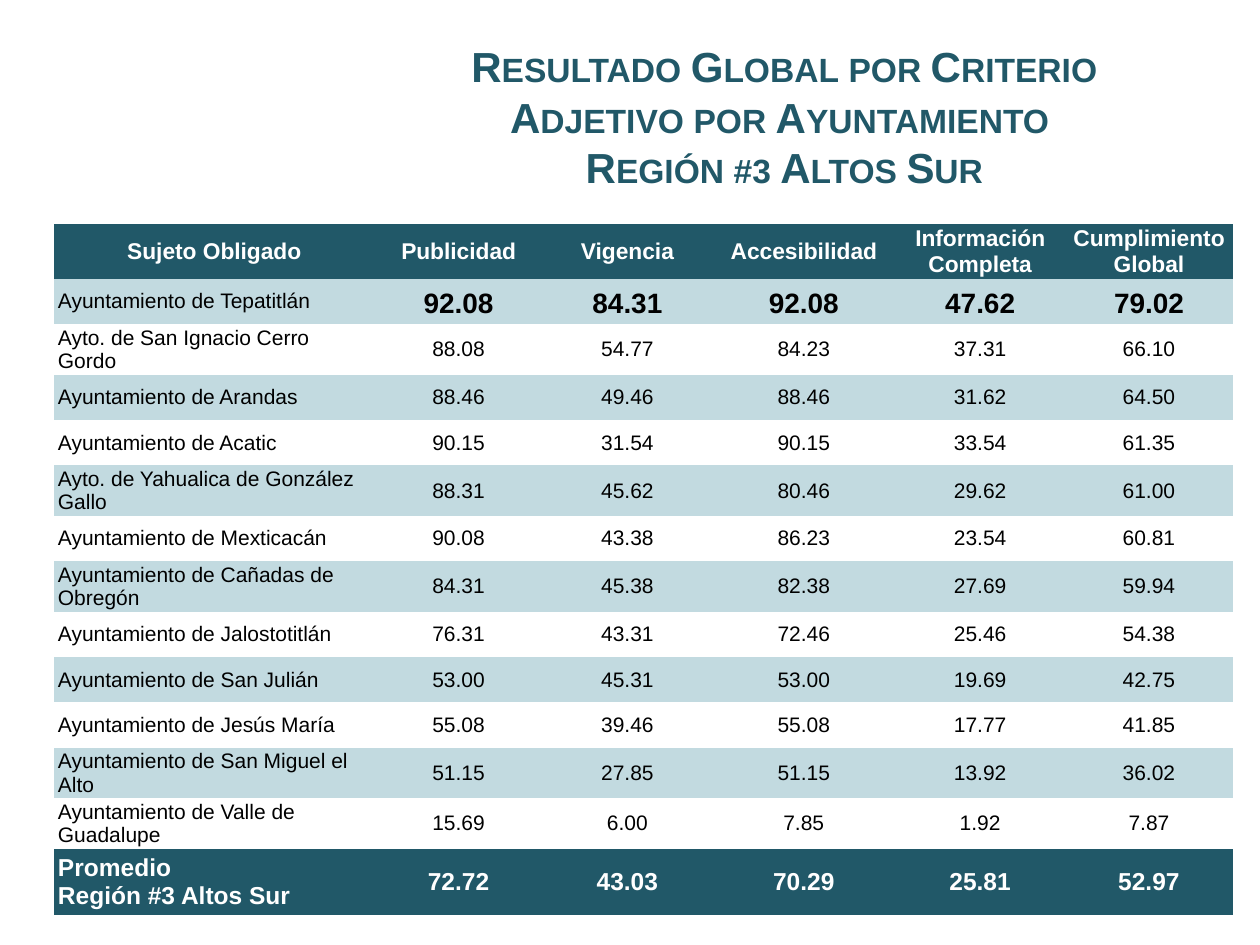
from pptx import Presentation
from pptx.dml.color import RGBColor
from pptx.enum.text import MSO_ANCHOR as Anchor, PP_ALIGN as Align
from pptx.util import Inches, Pt

TEAL = RGBColor(0x21, 0x58, 0x68)
PALE = RGBColor(0xC2, 0xDA, 0xE0)
WHITE = RGBColor(0xFF, 0xFF, 0xFF)
BLACK = RGBColor(0, 0, 0)

ROWS = [
    ("Sujeto Obligado", "Publicidad", "Vigencia", "Accesibilidad",
     "Información\vCompleta", "Cumplimiento Global"),
    ("Ayuntamiento de Tepatitlán", "92.08", "84.31", "92.08", "47.62", "79.02"),
    ("Ayto. de San Ignacio Cerro Gordo", "88.08", "54.77", "84.23", "37.31", "66.10"),
    ("Ayuntamiento de Arandas", "88.46", "49.46", "88.46", "31.62", "64.50"),
    ("Ayuntamiento de Acatic", "90.15", "31.54", "90.15", "33.54", "61.35"),
    ("Ayto. de Yahualica de González Gallo", "88.31", "45.62", "80.46", "29.62", "61.00"),
    ("Ayuntamiento de Mexticacán", "90.08", "43.38", "86.23", "23.54", "60.81"),
    ("Ayuntamiento de Cañadas de Obregón", "84.31", "45.38", "82.38", "27.69", "59.94"),
    ("Ayuntamiento de Jalostotitlán", "76.31", "43.31", "72.46", "25.46", "54.38"),
    ("Ayuntamiento de San Julián", "53.00", "45.31", "53.00", "19.69", "42.75"),
    ("Ayuntamiento de Jesús María", "55.08", "39.46", "55.08", "17.77", "41.85"),
    ("Ayuntamiento de San Miguel el Alto", "51.15", "27.85", "51.15", "13.92", "36.02"),
    ("Ayuntamiento de Valle de Guadalupe", "15.69", "6.00", "7.85", "1.92", "7.87"),
    ("Promedio\nRegión #3 Altos Sur", "72.72", "43.03", "70.29", "25.81", "52.97"),
]
WIDTHS = [2.54, 1.34, 1.34, 1.46, 1.34, 1.34]
LAST = len(ROWS) - 1
TALL = 30  # names longer than this take two lines


def style(par, size, color, bold, align):
    par.alignment = align
    font = par.font
    font.name, font.size, font.bold = "Arial", Pt(size), bold
    font.color.rgb = color


prs = Presentation()
prs.slide_width, prs.slide_height = Inches(10), Inches(7.5)
slide = prs.slides.add_slide(prs.slide_layouts[6])

# Title in small capitals
box = slide.shapes.add_textbox(Inches(2.95), Inches(0.3), Inches(6.55), Inches(1.25))
frame = box.text_frame
frame.word_wrap = True
frame.vertical_anchor = Anchor.MIDDLE
par = frame.paragraphs[0]
par.text = ("Resultado Global por Criterio Adjetivo por Ayuntamiento \v"
            "Región #3 Altos Sur")
style(par, 24, TEAL, True, Align.CENTER)
for props in par._p.xpath(".//a:defRPr | .//a:rPr"):
    props.set("cap", "small")

# Table without style or grid
table = slide.shapes.add_table(len(ROWS), len(WIDTHS), Inches(0.43), Inches(1.78),
                               Inches(sum(WIDTHS)), Inches(5.52)).table
table.horz_banding = False
table._tbl.tblPr.xpath("a:tableStyleId")[0].text = "{2D5ABB26-0587-4C30-8999-92F81FD0307C}"
for col, width in zip(table.columns, WIDTHS):
    col.width = Inches(width)

for r, row in enumerate(ROWS):
    edge = r in (0, LAST)
    high = 0.53 if r == LAST else 0.4 if len(row[0]) > TALL else 0.36
    table.rows[r].height = Inches(high)
    for c, text in enumerate(row):
        cell = table.cell(r, c)
        cell.margin_left = cell.margin_right = Inches(0.03)
        cell.margin_top = cell.margin_bottom = 0
        cell.vertical_anchor = Anchor.MIDDLE
        # Dark ends, with every other row pale between them
        if edge or r % 2:
            cell.fill.solid()
            cell.fill.fore_color.rgb = TEAL if edge else PALE
        else:
            cell.fill.background()
        top = r == 1 and c > 0  # scores of the leader
        size = 13 if r == 0 else 14 if r == LAST else 16 if top else 12
        align = Align.LEFT if c == 0 and r > 0 else Align.CENTER
        cell.text = text
        for par in cell.text_frame.paragraphs:
            style(par, size, WHITE if edge else BLACK, edge or top, align)
            if top:
                par.line_spacing = 1.15

prs.save("out.pptx")
